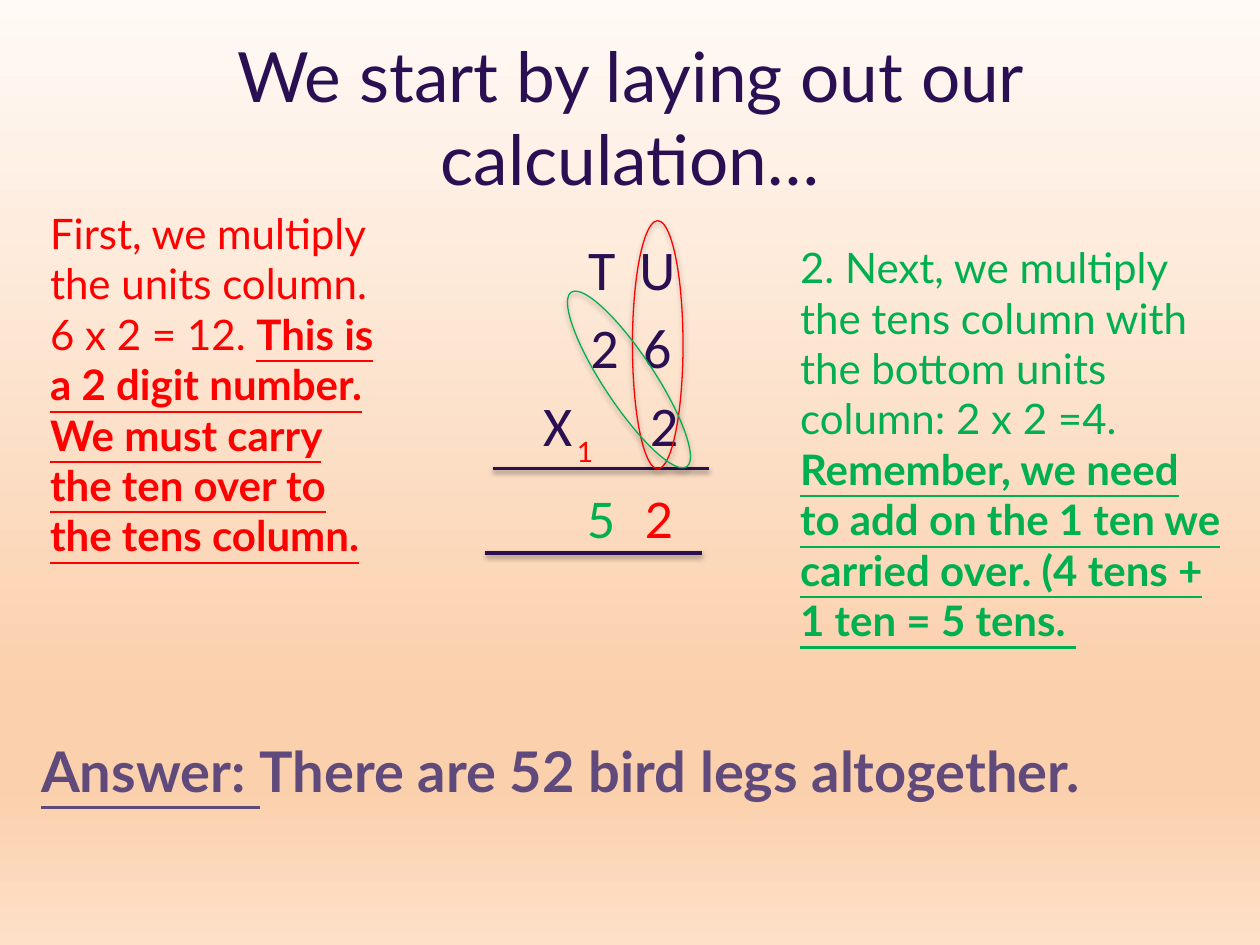
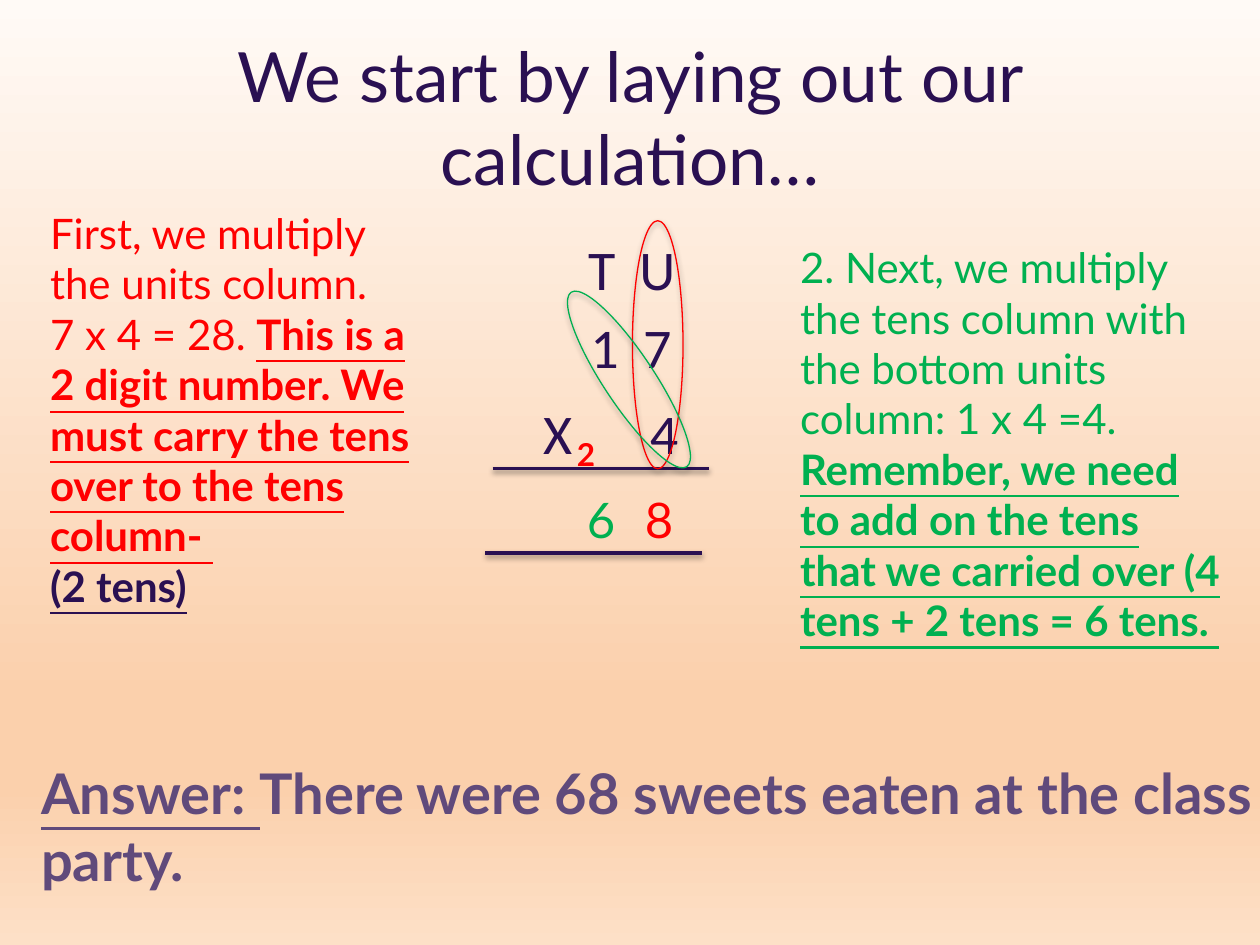
from dataclasses import dataclass
from lxml.etree import SubElement
from pptx import Presentation
from pptx.dml.color import RGBColor
from pptx.enum.shapes import MSO_CONNECTOR, MSO_SHAPE
from pptx.enum.text import MSO_ANCHOR, PP_ALIGN
from pptx.oxml.ns import qn
from pptx.util import Cm, Pt


@dataclass(frozen=True)
class Theme:
    ink: str = "2A1052"
    red: str = "FF0000"
    green: str = "00B050"
    plum: str = "604A7B"
    shade: str = "000000"
    fade: tuple = ((0, "FFFAF6"), (74, "FBD0AC"), (83, "FBD0AC"), (100, "FDE0C7"))
    font: str = "Lato"
    sum_font: str = "Calibri"
    title: float = 39.6
    sum: int = 32
    step: int = 24
    digit: int = 28
    answer: int = 32
    rule: int = 2
    ring: float = 0.75


class Deck:
    def __init__(self, theme):
        self.theme = theme
        self.file = Presentation()
        self.file.slide_width, self.file.slide_height = Cm(25.4), Cm(19.05)

    def page(self):
        self.slide = self.file.slides.add_slide(self.file.slide_layouts[6])
        fill = self.slide.background.fill
        fill.gradient()
        fill.gradient_angle = 270
        stops = self.slide.element.find(".//" + qn("a:gsLst"))
        for stop in list(stops):
            stops.remove(stop)
        for place, tint in self.theme.fade:
            stop = SubElement(stops, qn("a:gs"), pos=str(place * 1000))
            SubElement(stop, qn("a:srgbClr"), val=tint)

    def shadow(self, shape, alpha, dist):
        effects = SubElement(shape.element.spPr, qn("a:effectLst"))
        outer = SubElement(effects, qn("a:outerShdw"), blurRad=str(Pt(3.1)),
                           dist=str(Pt(dist)), dir="5400000", rotWithShape="0")
        tint = SubElement(outer, qn("a:srgbClr"), val=self.theme.shade)
        SubElement(tint, qn("a:alpha"), val=str(alpha * 1000))

    def frame(self, x, y, w, h):
        frame = self.slide.shapes.add_textbox(Cm(x), Cm(y), Cm(w), Cm(h)).text_frame
        frame.word_wrap = True
        return frame

    def run(self, para, text, size, tint, bold=False, under=False, font=None):
        run = para.add_run()
        run.text = text
        face = run.font
        face.name = font or self.theme.font
        face.size = Pt(size)
        face.bold, face.underline = bold, under
        face.color.rgb = RGBColor.from_string(tint)

    def text(self, box, lines, size):
        frame = self.frame(*box)
        for i, line in enumerate(lines):
            para = frame.add_paragraph() if i else frame.paragraphs[0]
            for words, tint, *style in line:
                self.run(para, words, size, tint, *style)
        return frame

    def title(self, words):
        frame = self.text((1.27, 0.76, 22.86, 3.18), [[(words, self.theme.ink)]],
                          self.theme.title)
        frame.vertical_anchor = MSO_ANCHOR.MIDDLE
        frame.paragraphs[0].alignment = PP_ALIGN.CENTER

    def sum(self, top, unit, drop):
        frame = self.frame(10.95, 4.72, 3.6, 5)
        frame.margin_left = frame.margin_right = frame.margin_top = 0
        rows = (("\tT\tU", (1.18, 2.3), 0),
                (f"\t{top[0]}\t{top[1]}", (1.24, 2.3), 6.4),
                (f"X\t{unit}", (2.44,), 6.4 + drop))
        for i, (words, stops, gap) in enumerate(rows):
            para = frame.add_paragraph() if i else frame.paragraphs[0]
            para.space_before = Pt(gap)
            self.run(para, words, self.theme.sum, self.theme.ink,
                     font=self.theme.sum_font)
            tabs = SubElement(para._p.get_or_add_pPr(), qn("a:tabLst"))
            for stop in stops:
                SubElement(tabs, qn("a:tab"), pos=str(Cm(stop)), algn="ctr")

    def rule(self, x, y):
        line = self.slide.shapes.add_connector(
            MSO_CONNECTOR.STRAIGHT, Cm(x), Cm(y), Cm(x + 4.37), Cm(y))
        line.line.color.rgb = RGBColor.from_string(self.theme.ink)
        line.line.width = Pt(self.theme.rule)
        self.shadow(line, 38, 1.6)

    def ring(self, x, y, w, h, tint, turn=0):
        ring = self.slide.shapes.add_shape(MSO_SHAPE.OVAL, Cm(x), Cm(y), Cm(w), Cm(h))
        ring.rotation = turn
        ring.fill.background()
        ring.line.color.rgb = RGBColor.from_string(tint)
        ring.line.width = Pt(self.theme.ring)
        self.shadow(ring, 35, 1.8)

    def digit(self, x, y, mark, tint, size, bold=False):
        self.text((x, y, 0.69, 1.44), [[(mark, tint, bold)]], size)


@dataclass(frozen=True)
class Task:
    top: str
    unit: str
    total: str
    carry: str
    small: int
    strong: bool
    drop: float
    first: str
    keep: str
    note: str
    wide: float
    next: str
    add: str
    reply: str
    low: float


TASKS = (
    Task("26", "2", "52", "1", 16, False, 0, "6 x 2 = 12. ",
         "This is a 2 digit number. We must carry the ten over to the tens column.",
         "", 7.21, "2 x 2 =4. ",
         "Remember, we need to add on the 1 ten we carried over. "
         "(4 tens + 1 ten = 5 tens. ",
         "There are 52 bird legs altogether.", 14.73),
    Task("17", "4", "68", "2", 18, True, 4.6, "7 x 4 = 28. ",
         "This is a 2 digit number. We must carry the tens over to the tens column- ",
         "(2 tens)", 7.75, "1 x 4 =4. ",
         "Remember, we need to add on the tens that we carried over "
         "(4 tens + 2 tens = 6 tens. ",
         "There were 68 sweets eaten at the class party.", 15.16),
)


def draw(deck, task):
    look = deck.theme
    deck.page()
    deck.title("We start by laying out our calculation…")
    deck.sum(task.top, task.unit, task.drop)
    deck.rule(9.93, 9.45)
    deck.ring(12.75, 4.45, 1.02, 5, look.red)
    deck.ring(12.17, 5.54, 1.02, 4.22, look.green, 326.5)
    first = [[("First, we multiply the units column.", look.red)],
             [(task.first, look.red), (task.keep, look.red, True, True)]]
    if task.note:
        first.append([(task.note, look.ink, True, True)])
    deck.text((0.76, 4.06, task.wide, 9), first, look.step)
    deck.text((15.88, 4.75, 9, 9), [[
        ("2. Next, we multiply the tens column with the bottom units column: "
         + task.next, look.green),
        (task.add, look.green, True, True)]], look.step)
    deck.rule(9.78, 11.15)
    tens, units = task.total
    deck.digit(12.75, 9.75, units, look.red, look.digit)
    deck.digit(11.58, 9.75, tens, look.green, look.digit)
    deck.text((0.58, task.low, 25.02, 1.63), [[
        ("Answer: ", look.plum, True, True), (task.reply, look.plum, True)]],
        look.answer)
    deck.digit(11.38, 8.64, task.carry, look.red, task.small, task.strong)


def main():
    deck = Deck(Theme())
    for task in TASKS:
        draw(deck, task)
    deck.file.save("out.pptx")


if __name__ == "__main__":
    main()
